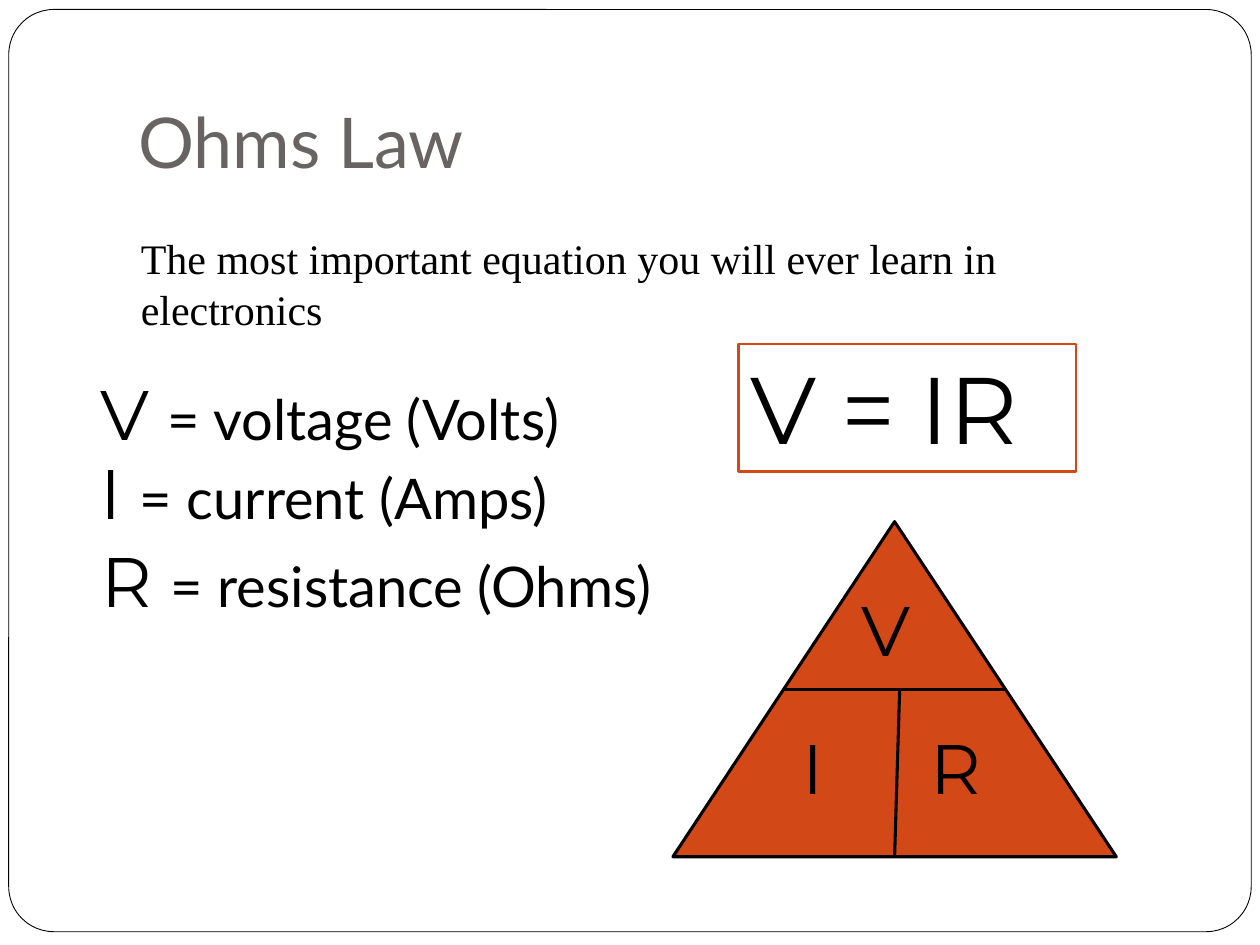
"""Build the Ohms Law slide with its formula, legend and triangle."""
from lxml.etree import SubElement
from pptx import Presentation
from pptx.dml.color import RGBColor
from pptx.enum.shapes import MSO_CONNECTOR, MSO_SHAPE
from pptx.enum.text import MSO_ANCHOR, MSO_AUTO_SIZE, PP_ALIGN
from pptx.oxml.ns import qn
from pptx.util import Pt

BLACK, WHITE, ORANGE, GRAY = "000000", "FFFFFF", "D34817", "696464"
SYMBOL, BODY, SERIF = "Montserrat", "Lato", "Times New Roman"

TITLE = "Ohms Law"
SENTENCE = "The most important equation you will ever learn in electronics"
FORMULA = "V = IR"
LEGEND = [
    ("V ", "= voltage (Volts)", (50.4, 208.1, 277.2, 55.4)),
    ("I ", "= current (Amps)", (50.4, 253.4, 271.4, 55.4)),
    ("R ", "= resistance (Ohms)", (51.1, 303.8, 334.1, 55.4)),
]
TRIANGLE = (384.5, 298.1, 253.4, 191.5)
TRIANGLE_LETTERS = [
    ("V", (485.3, 331.9, 46.1, 55.4)),
    ("I", (451.4, 410.4, 30.2, 55.4)),
    ("R", (524.9, 410.4, 46.1, 55.4)),
]


def color(value):
    return RGBColor.from_string(value)


def write(shape, runs, wrap=False, anchor=MSO_ANCHOR.TOP):
    frame = shape.text_frame
    frame.word_wrap = wrap
    frame.auto_size = MSO_AUTO_SIZE.NONE if wrap else MSO_AUTO_SIZE.SHAPE_TO_FIT_TEXT
    frame.vertical_anchor = anchor
    paragraph = frame.paragraphs[0]
    paragraph.alignment = PP_ALIGN.LEFT
    for text, size, font, shade in runs:
        run = paragraph.add_run()
        run.text = text
        run.font.size = Pt(size)
        run.font.name = font
        run.font.color.rgb = color(shade)


def add_text(slide, box, runs, **options):
    shape = slide.shapes.add_textbox(*map(Pt, box))
    write(shape, runs, **options)
    return shape


def add_outlined(slide, kind, box, fill, line, width):
    shape = slide.shapes.add_shape(kind, *map(Pt, box))
    shape.shadow.inherit = False
    if fill:
        shape.fill.solid()
        shape.fill.fore_color.rgb = color(fill)
    else:
        shape.fill.background()
    shape.line.color.rgb = color(line)
    shape.line.width = Pt(width)
    return shape


def add_line(slide, start, end):
    connector = slide.shapes.add_connector(
        MSO_CONNECTOR.STRAIGHT, *map(Pt, start + end))
    connector.line.color.rgb = color(BLACK)
    connector.line.width = Pt(1.75)
    SubElement(connector._element.spPr, qn("a:effectLst"))


def add_triangle(slide):
    left, top, width, height = TRIANGLE
    add_outlined(slide, MSO_SHAPE.ISOSCELES_TRIANGLE, TRIANGLE, ORANGE, BLACK, 1.75)
    center, middle = left + width / 2, top + height / 2
    add_line(slide, (left + width / 4, middle), (left + width * 3 / 4, middle))
    add_line(slide, (center, top + height), (center + 2.9, middle))
    for letter, box in TRIANGLE_LETTERS:
        add_text(slide, box, [(letter, 40, SYMBOL, BLACK)])


def main():
    presentation = Presentation()
    presentation.slide_width, presentation.slide_height = Pt(720), Pt(540)
    slide = presentation.slides.add_slide(presentation.slide_layouts[6])

    frame = add_outlined(slide, MSO_SHAPE.ROUNDED_RECTANGLE,
                         (5, 5.4, 710, 527), WHITE, BLACK, 0.5)
    frame.adjustments[0] = 0.049

    title = add_text(slide, (72, 21.6, 612, 90), [(TITLE, 40, BODY, GRAY)],
                     wrap=True, anchor=MSO_ANCHOR.BOTTOM)
    title.text_frame.margin_bottom = Pt(7.2)

    add_triangle(slide)
    formula = add_outlined(slide, MSO_SHAPE.RECTANGLE,
                           (421.9, 196.6, 193, 72.7), None, ORANGE, 1.5)
    write(formula, [(FORMULA, 54, SYMBOL, BLACK)])
    for symbol, meaning, box in LEGEND:
        add_text(slide, box, [(symbol, 40, SYMBOL, BLACK), (meaning, 32, BODY, BLACK)])
    add_text(slide, (73.4, 129.6, 563, 36), [(SENTENCE, 24, SERIF, BLACK)], wrap=True)

    presentation.save("out.pptx")


if __name__ == "__main__":
    main()
